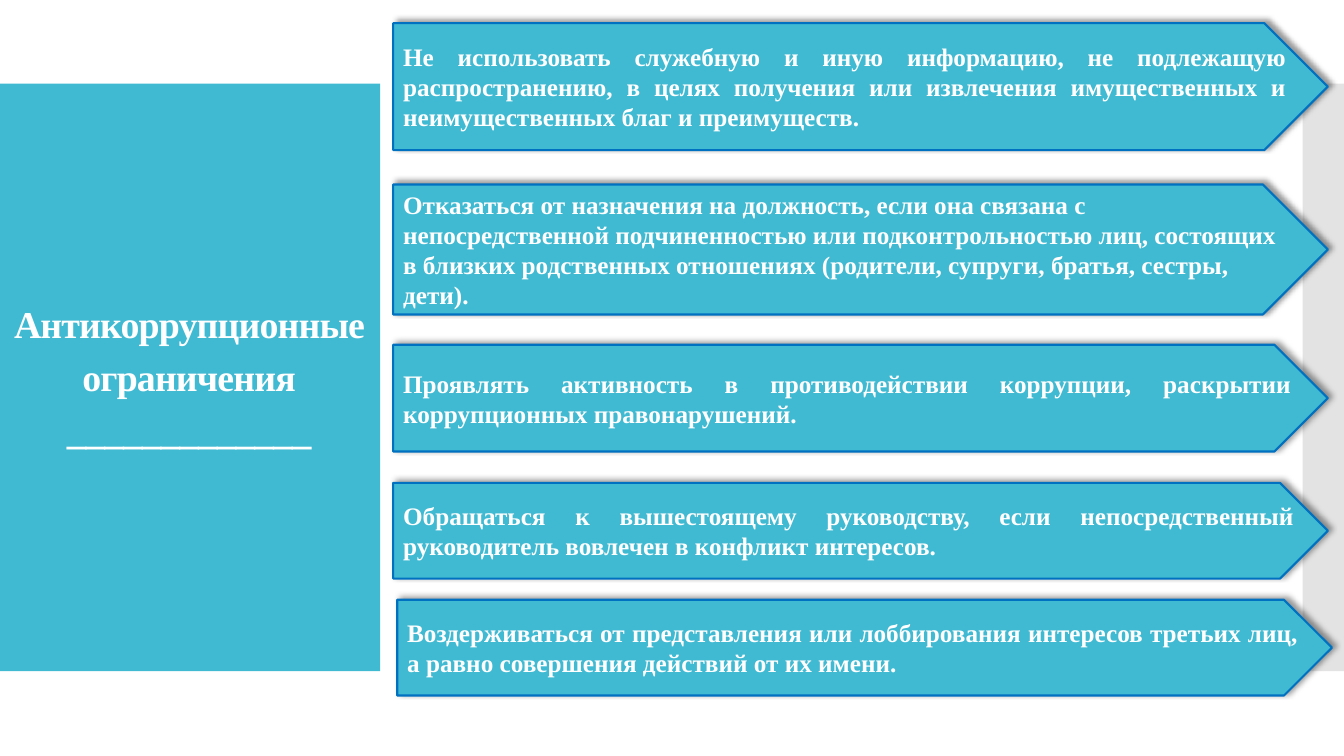
from dataclasses import dataclass

from lxml.etree import SubElement
from pptx import Presentation
from pptx.dml.color import RGBColor
from pptx.enum.shapes import MSO_SHAPE
from pptx.enum.text import MSO_ANCHOR, MSO_AUTO_SIZE, PP_ALIGN
from pptx.oxml.ns import qn
from pptx.util import Inches, Pt

# Content
TITLE = "Антикоррупционные ограничения"
RULE = "_____________"
LEFT, JUSTIFY = PP_ALIGN.LEFT, PP_ALIGN.JUSTIFY
# left, top, height, alignment, text
ARROWS = [
    (3.9, 0.23, 1.26, JUSTIFY,
     "Не использовать служебную и иную информацию, не подлежащую распространению, "
     "в целях получения или извлечения имущественных и неимущественных благ и преимуществ."),
    (3.9, 1.83, 1.29, LEFT,
     "Отказаться от назначения на должность, если она связана с непосредственной "
     "подчиненностью или подконтрольностью лиц, состоящих в близких родственных "
     "отношениях (родители, супруги, братья, сестры, дети)."),
    (3.9, 3.42, 1.06, JUSTIFY,
     "Проявлять активность в противодействии коррупции, раскрытии коррупционных "
     "правонарушений."),
    (3.9, 4.79, 0.95, JUSTIFY,
     "Обращаться к вышестоящему руководству, если непосредственный руководитель "
     "вовлечен в конфликт интересов."),
    (3.94, 5.95, 0.95, JUSTIFY,
     "Воздерживаться от представления или лоббирования интересов третьих лиц, "
     "а равно совершения действий от их имени."),
]
ARROW_WIDTH = 9.27
BAND_TOP, BAND_HEIGHT = 0.83, 5.83


@dataclass(frozen=True)
class Theme:
    teal: RGBColor = RGBColor.from_string("40BAD2")
    grey: RGBColor = RGBColor.from_string("C8C8C8")
    blue: RGBColor = RGBColor.from_string("0070C0")
    white: RGBColor = RGBColor.from_string("FFFFFF")
    font: str = "Times New Roman"
    title_size: float = 27
    rule_size: float = 28
    body_size: float = 18


THEME = Theme()


def add_box(s, kind, left, top, width, height, color):
    sp = s.shapes.add_shape(kind, Inches(left), Inches(top), Inches(width), Inches(height))
    sp.shadow.inherit = False
    sp.fill.solid()
    sp.fill.fore_color.rgb = color
    sp.line.fill.background()
    return sp


def set_alpha(color_element, percent):
    SubElement(color_element, qn("a:alpha"), val=str(percent * 1000))


def add_shadow(sp):
    effects = sp._element.spPr.find(qn("a:effectLst"))
    shadow = SubElement(effects, qn("a:outerShdw"), blurRad=str(Pt(4)), dist=str(Pt(3)),
                        dir=str(315 * 60000), algn="bl", rotWithShape="0")
    set_alpha(SubElement(shadow, qn("a:srgbClr"), val="000000"), 40)


def add_run(p, text, size):
    r = p.add_run()
    r.text = text
    r.font.name = THEME.font
    r.font.size = Pt(size)
    r.font.bold = True
    r.font.color.rgb = THEME.white
    return r


def add_bands(s):
    panel = add_box(s, MSO_SHAPE.RECTANGLE, 0, BAND_TOP, 3.77, BAND_HEIGHT, THEME.teal)
    strip = add_box(s, MSO_SHAPE.RECTANGLE, 12.92, BAND_TOP, 0.42, BAND_HEIGHT, THEME.grey)
    set_alpha(strip._element.spPr.find(".//" + qn("a:srgbClr")), 50)
    # The bands lie behind the title
    for band in (strip, panel):
        s.shapes._spTree.insert(2, band._element)


def fill_title(s):
    sp = s.shapes.title
    sp.left, sp.top, sp.width, sp.height = (Inches(v) for v in (0, 1.7, 3.75, 4.01))
    tf = sp.text_frame
    tf.word_wrap = True
    tf.auto_size = MSO_AUTO_SIZE.NONE
    tf.vertical_anchor = MSO_ANCHOR.MIDDLE
    p = tf.paragraphs[0]
    p.alignment = PP_ALIGN.CENTER
    p.line_spacing = 1.15
    heading = add_run(p, TITLE, THEME.title_size)
    p.add_line_break()
    rule = add_run(p, RULE, THEME.rule_size)
    for r in (heading, rule):
        r.font._element.set("spc", "-60")


def add_arrow(s, left, top, height, alignment, text):
    sp = add_box(s, MSO_SHAPE.PENTAGON, left, top, ARROW_WIDTH, height, THEME.teal)
    sp.line.color.rgb = THEME.blue
    sp.line.width = Pt(1.5)
    add_shadow(sp)
    tf = sp.text_frame
    tf.word_wrap = True
    tf.vertical_anchor = MSO_ANCHOR.MIDDLE
    p = tf.paragraphs[0]
    p.alignment = alignment
    add_run(p, text, THEME.body_size)


def main():
    prs = Presentation()
    prs.slide_width, prs.slide_height = Inches(13.33), Inches(7.5)
    s = prs.slides.add_slide(prs.slide_layouts[5])

    # Side panel, right strip and title
    add_bands(s)
    fill_title(s)

    # Restriction arrows
    for arrow in ARROWS:
        add_arrow(s, *arrow)

    prs.save("out.pptx")


if __name__ == "__main__":
    main()
